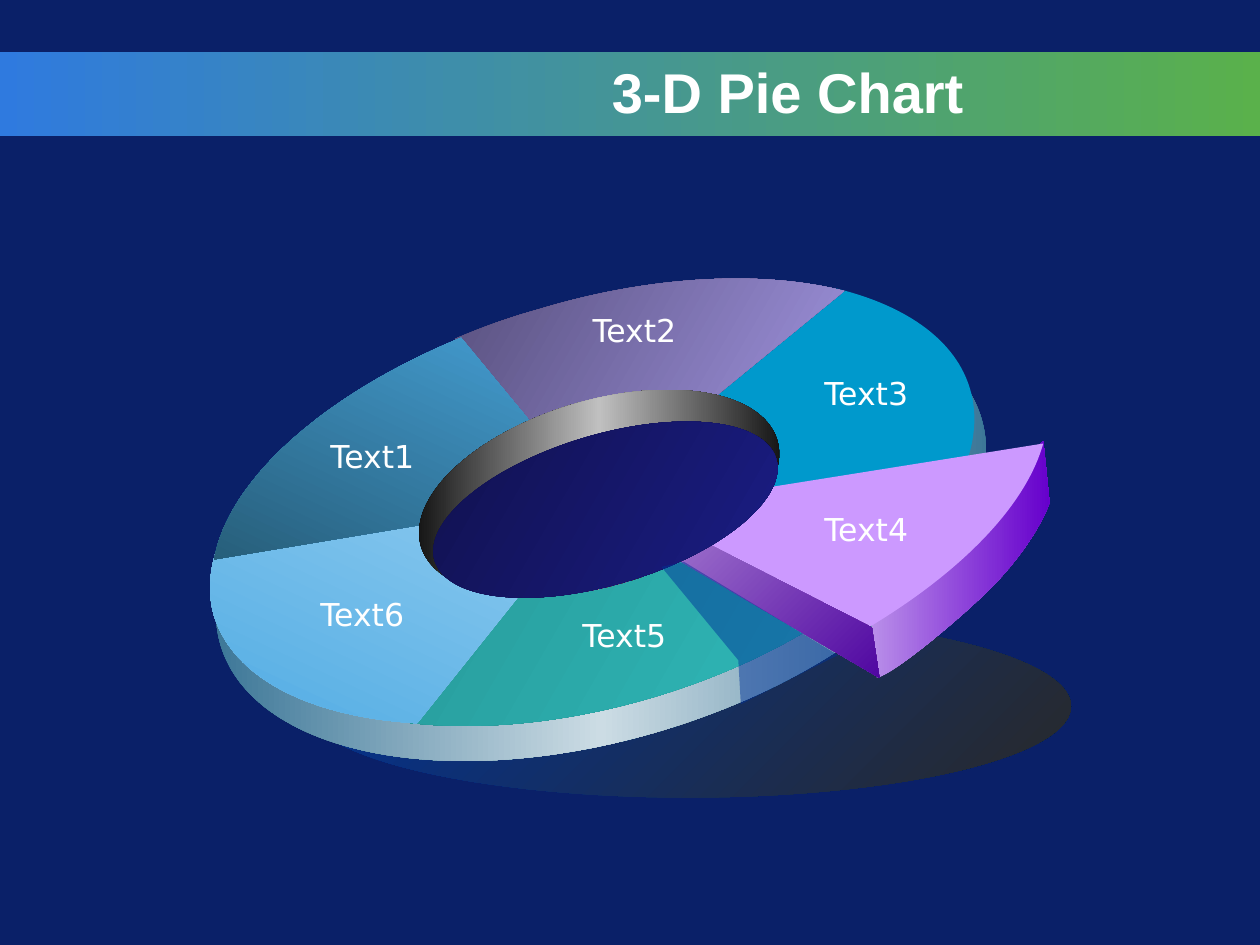
from dataclasses import dataclass
from math import cos, radians, sin

from lxml import etree
from pptx import Presentation
from pptx.dml.color import RGBColor
from pptx.enum.shapes import MSO_SHAPE
from pptx.enum.text import MSO_ANCHOR, MSO_AUTO_SIZE, PP_ALIGN
from pptx.oxml.ns import qn
from pptx.util import Inches, Pt

TILT = 343.4
WHITE = "FFFFFF"


@dataclass
class Paint:
    """One colour is a solid fill; several are evenly spread gradient stops."""
    colours: tuple[str, ...]
    angle: float = 0
    opacity: int = 100


@dataclass
class Oval:
    left: float
    top: float
    width: float
    height: float
    paint: Paint
    rotation: float = TILT


@dataclass
class Outline:
    """Each step is a line (x, y) or a cubic curve (x1, y1, x2, y2, x, y)."""
    start: tuple[float, float]
    steps: list[tuple[float, ...]]
    paint: Paint
    rotation: float = 0


@dataclass
class Label:
    text: str
    left: float
    top: float


DISC = [
    Oval(2.42, 4.88, 6.08, 1.45, Paint(("003399", "292929"), 45), 0),
    Oval(1.62, 2.57, 6.3, 3.3, Paint(("29698D", "CCDCE4", "29698D"))),
    Oval(1.69, 2.4, 6.08, 3.2, Paint(("228080", "32C8C8"), 30)),
]

SLICES = [
    Outline((6.64, 2.29),
            [(7.21, 2.43, 7.59, 2.71, 7.7, 3.09),
             (7.76, 3.29, 7.74, 3.52, 7.64, 3.75), (4.71, 3.98)],
            Paint(("0099CC",)), TILT),
    Outline((1.72, 4.36),
            [(1.66, 4.54, 1.65, 4.72, 1.7, 4.89),
             (1.85, 5.37, 2.44, 5.69, 3.31, 5.74), (4.71, 3.99)],
            Paint(("9CD2F2", "4AA8E2"), 115), TILT),
    Outline((3.61, 2.69),
            [(3.82, 2.6, 4.04, 2.52, 4.26, 2.46),
             (5.14, 2.19, 6.04, 2.14, 6.7, 2.31), (4.71, 3.94)],
            Paint(("544C78", "AC9FF0"), 30), TILT),
    Outline((3.66, 2.68),
            [(2.57, 3.13, 1.81, 3.81, 1.7, 4.44), (4.7, 3.94)],
            Paint(("47A3DA", "22546C"), 115), TILT),
]

HOLE_WALL = Oval(3.28, 3.18, 2.95, 1.47,
                 Paint(("000000", "C0C0C0", "000000")))

PULLED_SLICE = [
    Outline((6.92, 4.96),
            [(8.28, 3.5), (8.33, 3.99),
             (8.26, 4.18, 8.09, 4.44, 7.86, 4.67),
             (7.63, 4.9, 7.12, 5.33, 6.96, 5.38),
             (6.93, 5.25, 6.92, 4.96, 6.92, 4.96)],
            Paint(("B98EE9", "6600CC"))),
    Outline((8.28, 3.52),
            [(8.14, 4.02, 7.62, 4.55, 6.86, 5), (5.02, 4.04)],
            Paint(("CC99FF",)), 342.3),
    Outline((6.92, 4.98),
            [(6.98, 5.38), (5.17, 4.32), (5.06, 4.03)],
            Paint(("AC84D4", "5007A1"), 45)),
]

HOLE_FLOOR = Oval(3.39, 3.45, 2.83, 1.19, Paint(("10104A", "1B1E8A"), 30))

GAP_SHADE = Outline((5.25, 4.5),
                    [(5.86, 5.24), (5.88, 5.59), (6.65, 5.2), (5.43, 4.46)],
                    Paint(("003399",), opacity=49))

LABELS = [
    Label("Text1", 2.5, 3.42), Label("Text2", 4.58, 2.42),
    Label("Text3", 6.42, 2.92), Label("Text4", 6.42, 4),
    Label("Text5", 4.5, 4.84), Label("Text6", 2.42, 4.67),
]


def rgb(colour: str) -> RGBColor:
    return RGBColor.from_string(colour)


def apply_paint(sp, paint: Paint) -> None:
    sp.shadow.inherit = False
    sp.line.fill.background()
    if len(paint.colours) == 1:
        sp.fill.solid()
        sp.fill.fore_color.rgb = rgb(paint.colours[0])
        if paint.opacity < 100:
            clr = next(sp.element.spPr.iter(qn("a:srgbClr")))
            etree.SubElement(clr, qn("a:alpha"), val=str(paint.opacity * 1000))
        return
    sp.fill.gradient()
    sp.fill.gradient_angle = -paint.angle % 360
    grad = sp.element.spPr.find(qn("a:gradFill"))
    grad.set("rotWithShape", "0")
    stops = grad.find(qn("a:gsLst"))
    for stop in list(stops):
        stops.remove(stop)
    gap = 100000 // (len(paint.colours) - 1)
    for i, colour in enumerate(paint.colours):
        stop = etree.SubElement(stops, qn("a:gs"), pos=str(i * gap))
        etree.SubElement(stop, qn("a:srgbClr"), val=colour)


def add_oval(s, oval: Oval) -> None:
    sp = s.shapes.add_shape(MSO_SHAPE.OVAL, Inches(oval.left), Inches(oval.top),
                            Inches(oval.width), Inches(oval.height))
    sp.rotation = oval.rotation
    apply_paint(sp, oval.paint)


def turn(x: float, y: float, degrees: float) -> tuple[float, float]:
    """Turn a point clockwise about the slide's top left corner."""
    c, n = cos(radians(degrees)), sin(radians(degrees))
    return x * c - y * n, x * n + y * c


def bend_curves(sp, steps: list[tuple[float, ...]]) -> None:
    """Join the three line segments that stand for each curve into a Bézier."""
    lines = iter(list(sp.element.iter(qn("a:lnTo"))))
    for step in steps:
        first = next(lines)
        if len(step) == 6:
            first.tag = qn("a:cubicBezTo")
            for line in (next(lines), next(lines)):
                first.append(line[0])
                line.getparent().remove(line)


def add_outline(s, outline: Outline) -> None:
    """Draw the outline upright, then rotate it into its place."""
    points = [outline.start]
    for step in outline.steps:
        points += zip(step[::2], step[1::2])
    upright = [tuple(Inches(v) for v in turn(x, y, -outline.rotation))
               for x, y in points]
    builder = s.shapes.build_freeform(*upright[0])
    builder.add_line_segments(upright[1:], close=True)
    sp = builder.convert_to_shape()
    bend_curves(sp, outline.steps)
    x, y = turn(sp.left + sp.width / 2, sp.top + sp.height / 2, outline.rotation)
    sp.left, sp.top = round(x - sp.width / 2), round(y - sp.height / 2)
    sp.rotation = outline.rotation
    apply_paint(sp, outline.paint)


def add_run(p, text: str, font: str, size: int, bold: bool = False) -> None:
    r = p.add_run()
    r.text = text
    r.font.name, r.font.size, r.font.bold = font, Pt(size), bold
    r.font.color.rgb = rgb(WHITE)


def add_label(s, label: Label) -> None:
    tf = s.shapes.add_textbox(Inches(label.left), Inches(label.top),
                              Inches(0.91), Inches(0.4)).text_frame
    tf.word_wrap = False
    tf.auto_size = MSO_AUTO_SIZE.SHAPE_TO_FIT_TEXT
    tf.paragraphs[0].alignment = PP_ALIGN.CENTER
    add_run(tf.paragraphs[0], label.text, "DejaVu Sans", 18)


def add_title(s, text: str) -> None:
    title = s.shapes.title
    title.left, title.top = Inches(0.5), Inches(0.41)
    title.width, title.height = Inches(7.25), Inches(0.62)
    tf = title.text_frame
    tf.vertical_anchor = MSO_ANCHOR.MIDDLE
    tf.paragraphs[0].alignment = PP_ALIGN.RIGHT
    add_run(tf.paragraphs[0], text, "Arial", 32, bold=True)
    band = s.shapes.add_shape(MSO_SHAPE.RECTANGLE, 0, Inches(0.41),
                              Inches(10), Inches(0.67))
    apply_paint(band, Paint(("2F7ADF", "5AB14B")))
    title.element.addprevious(band.element)


def main() -> None:
    prs = Presentation()
    prs.slide_width, prs.slide_height = Inches(10), Inches(7.5)
    s = prs.slides.add_slide(prs.slide_layouts[5])
    s.background.fill.solid()
    s.background.fill.fore_color.rgb = rgb("0A2068")
    add_title(s, "3-D Pie Chart")
    for part in [*DISC, *SLICES, HOLE_WALL, *PULLED_SLICE, HOLE_FLOOR, GAP_SHADE]:
        if isinstance(part, Oval):
            add_oval(s, part)
        else:
            add_outline(s, part)
    for label in LABELS:
        add_label(s, label)
    prs.save("out.pptx")


if __name__ == "__main__":
    main()
